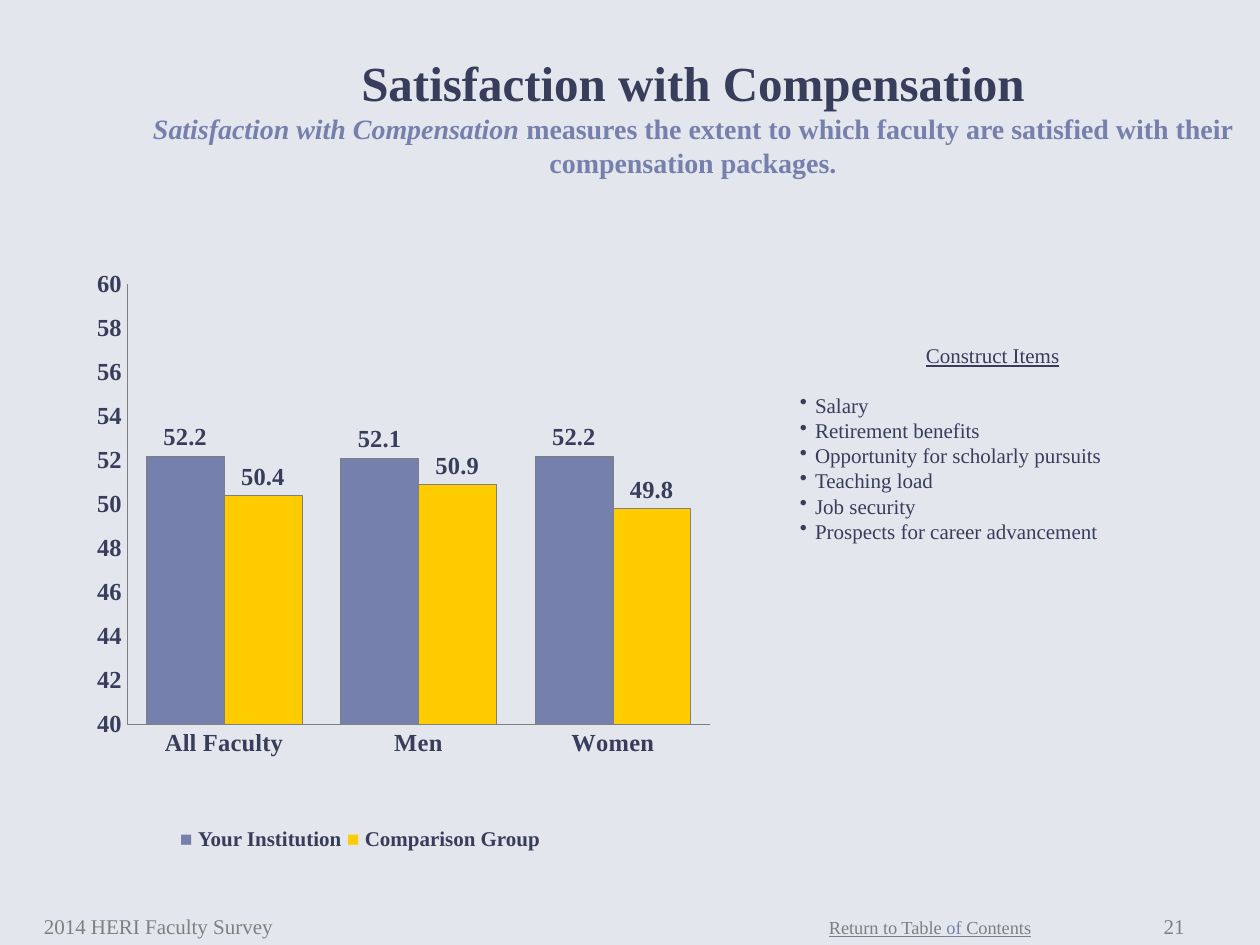
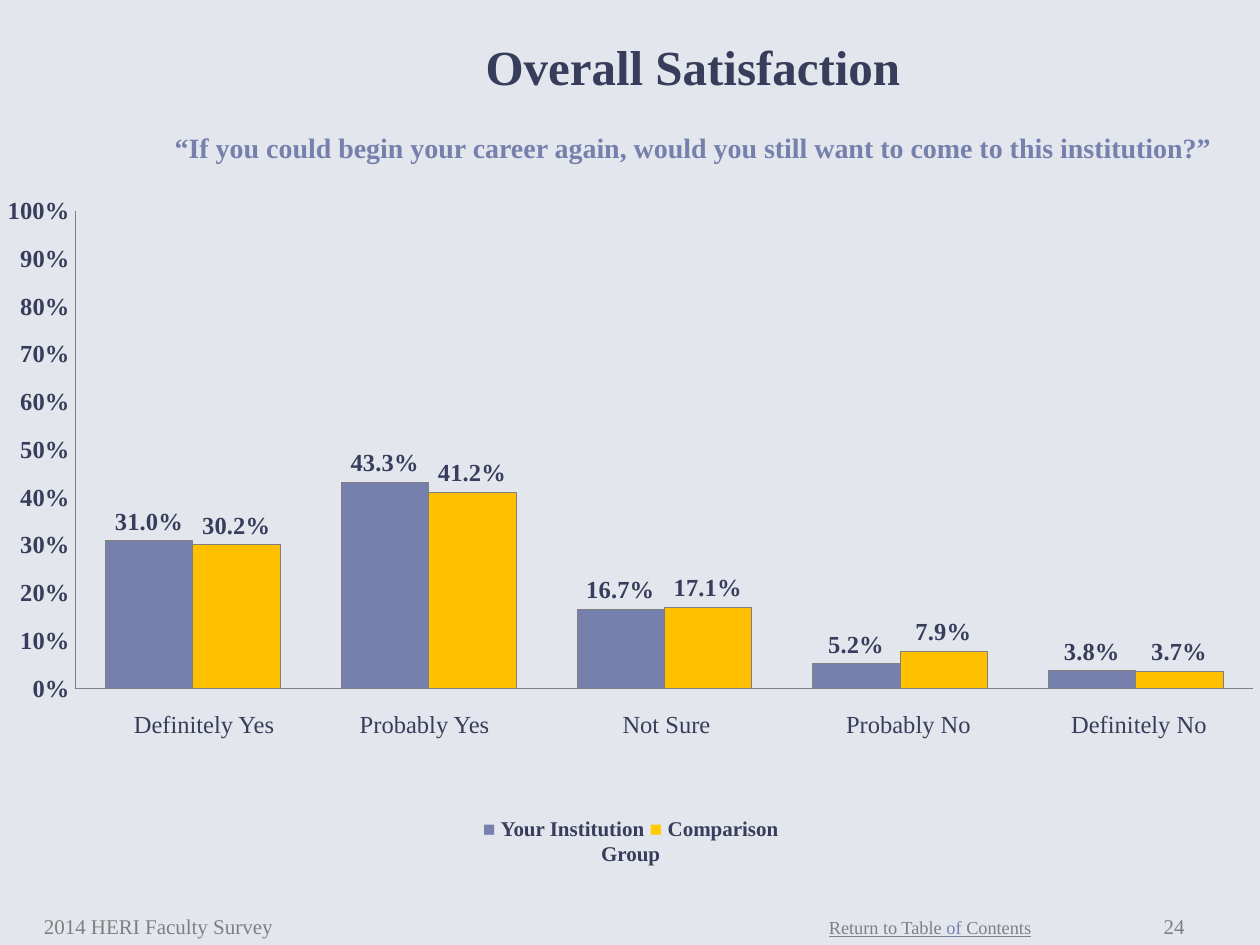
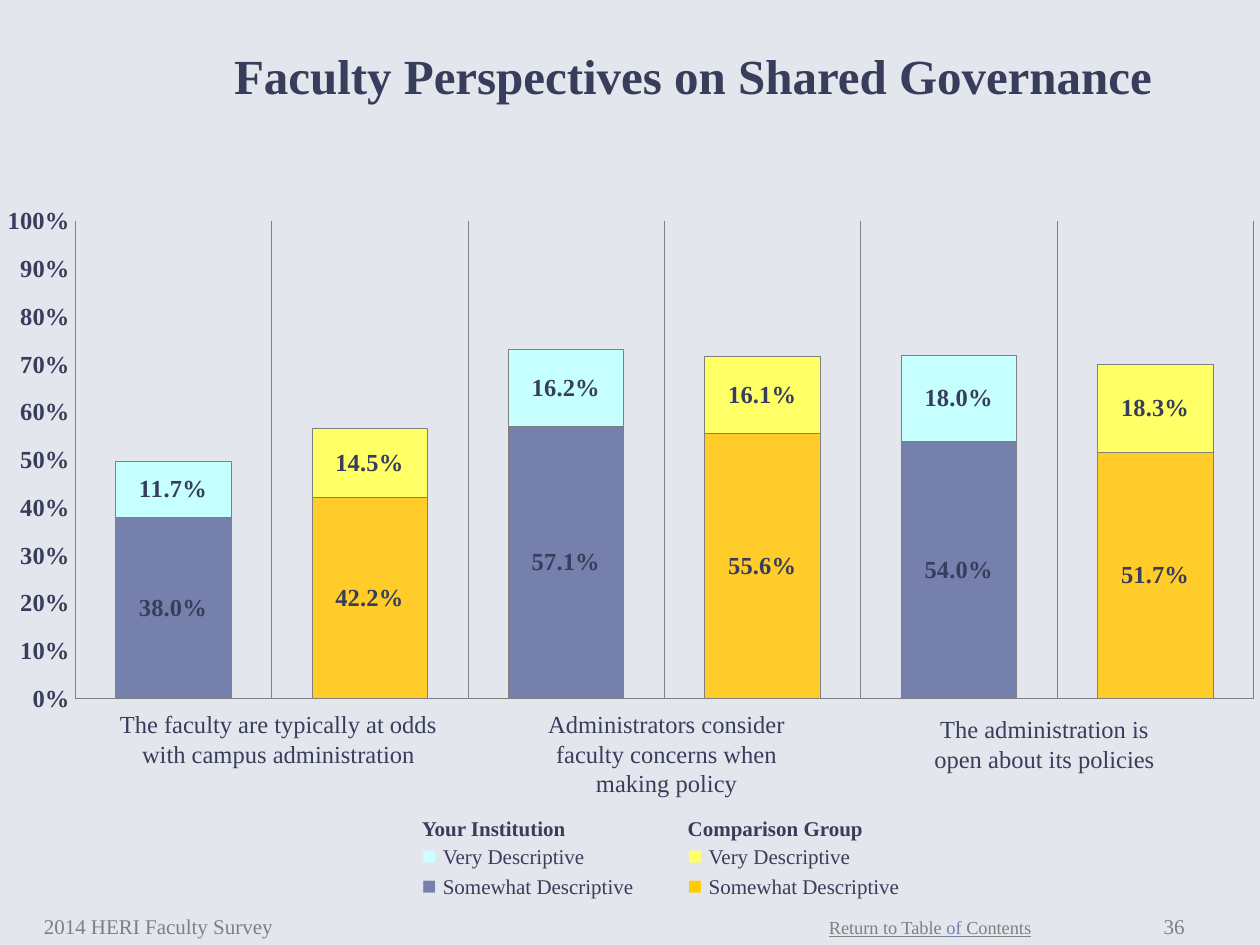
"""Build three faculty survey slides with column charts and shared titles and footers."""
from lxml import etree
from pptx import Presentation
from pptx.chart.data import CategoryChartData
from pptx.dml.color import RGBColor
from pptx.enum.chart import XL_CHART_TYPE, XL_LABEL_POSITION, XL_TICK_LABEL_POSITION, XL_TICK_MARK
from pptx.enum.text import MSO_ANCHOR, PP_ALIGN
from pptx.oxml.ns import qn
from pptx.util import Inches, Pt

LEFT, CENTER, RIGHT = PP_ALIGN.LEFT, PP_ALIGN.CENTER, PP_ALIGN.RIGHT
TOP, MIDDLE, BOTTOM = MSO_ANCHOR.TOP, MSO_ANCHOR.MIDDLE, MSO_ANCHOR.BOTTOM
CLUSTERED, STACKED = XL_CHART_TYPE.COLUMN_CLUSTERED, XL_CHART_TYPE.COLUMN_STACKED
OUTSIDE_END, LABEL_CENTER = XL_LABEL_POSITION.OUTSIDE_END, XL_LABEL_POSITION.CENTER
NO_TICK, NO_AXIS_LABELS = XL_TICK_MARK.NONE, XL_TICK_LABEL_POSITION.NONE

FONT = "Times New Roman"
COLORS = {
    "background": "E4E6EE",
    "navy": "373D5A",
    "blue": "7680AC",
    "gray": "7F7F7F",
    "gold": "FFCC00",
    "amber": "FFC000",
    "light_gold": "FFCC29",
    "aqua": "C5FFFE",
    "legend_aqua": "CCFFFF",
    "yellow": "FFFF66",
}
RGB = {name: RGBColor.from_string(value) for name, value in COLORS.items()}
WIDE_PLOT = (0.055, 0.029, 0.946, 0.933)


def add_text(slide, box, paragraphs, size, bold=False, align=LEFT, anchor=TOP):
    """Add a text box whose paragraphs are lists of (text, color) runs."""
    frame = slide.shapes.add_textbox(*map(Inches, box)).text_frame
    frame.word_wrap = True
    frame.vertical_anchor = anchor
    for index, runs in enumerate(paragraphs):
        paragraph = frame.paragraphs[0] if index == 0 else frame.add_paragraph()
        paragraph.alignment = align
        paragraph.font.name = FONT
        paragraph.font.size = Pt(size)
        paragraph.font.bold = bold
        for text, color in runs:
            run = paragraph.add_run()
            run.text = text
            run.font.color.rgb = RGB[color]
    return frame.paragraphs


def add_column_chart(slide, box, chart_type, categories, values, fills, scale, formats, gap, plot_box):
    """Add a two-series column chart; fills holds the repeating colors of each series."""
    data = CategoryChartData()
    data.categories = categories
    for number, series_values in enumerate(values, 1):
        data.add_series(f"Series {number}", series_values)
    chart = slide.shapes.add_chart(chart_type, *map(Inches, box), data).chart
    chart.has_title = False
    chart.has_legend = False
    chart.font.name = FONT
    chart.font.size = Pt(14)
    chart.font.bold = True
    chart.font.color.rgb = RGB["navy"]

    value_axis = chart.value_axis
    value_axis.minimum_scale, value_axis.maximum_scale, value_axis.major_unit = scale
    value_axis.has_major_gridlines = False
    value_axis.tick_labels.number_format, label_format = formats
    value_axis.tick_labels.number_format_is_linked = False
    for axis in (value_axis, chart.category_axis):
        axis.major_tick_mark = axis.minor_tick_mark = NO_TICK
        axis.format.line.color.rgb = RGB["gray"]
        axis.format.line.width = Pt(0.25)

    plot = chart.plots[0]
    plot.gap_width = gap
    plot.overlap = 100 if chart_type == STACKED else 0
    plot.vary_by_categories = False
    plot.has_data_labels = True
    labels = plot.data_labels
    labels.show_value = True
    labels.number_format = label_format
    labels.number_format_is_linked = False
    labels.position = LABEL_CENTER if chart_type == STACKED else OUTSIDE_END
    for series, colors in zip(plot.series, fills):
        series.invert_if_negative = False
        if len(colors) == 1:
            targets = [series]
        else:
            targets = [series.points[index] for index in range(len(categories))]
        for index, target in enumerate(targets):
            target.format.fill.solid()
            target.format.fill.fore_color.rgb = RGB[colors[index % len(colors)]]
            target.format.line.color.rgb = RGB["gray"]
            target.format.line.width = Pt(0.25)

    plot_area = chart._chartSpace.chart.plotArea
    for old_layout in plot_area.findall(qn("c:layout")):
        plot_area.remove(old_layout)
    layout = etree.Element(qn("c:layout"))
    manual = etree.SubElement(layout, qn("c:manualLayout"))
    settings = [("layoutTarget", "inner"), ("xMode", "edge"), ("yMode", "edge"), *zip("xywh", plot_box)]
    for tag, value in settings:
        etree.SubElement(manual, qn(f"c:{tag}")).set("val", str(value))
    plot_area.insert(0, layout)
    return chart


presentation = Presentation()
presentation.slide_width, presentation.slide_height = Inches(10), Inches(7.5)
master_fill = presentation.slide_master.background.fill
master_fill.solid()
master_fill.fore_color.rgb = RGB["background"]

slides = []
for page, title, subtitle, title_height, subtitle_gap in (
    ("21", "Satisfaction with Compensation",
     ["Satisfaction with Compensation ",
      "measures the extent to which faculty are satisfied with their compensation packages."], 1.5, 0),
    ("24", "Overall Satisfaction",
     ["“If you could begin your career again, would you still want to come to this institution?”"], 1.25, 20),
    ("36", "Faculty Perspectives on Shared Governance", [], 0.85, 0),
):
    slide = presentation.slides.add_slide(presentation.slide_layouts[6])
    slides.append(slide)
    heading = [[(title, "navy")]]
    if subtitle:
        heading.append([(text, "blue") for text in subtitle])
    title_lines = add_text(slide, (1, 0.17, 9, title_height), heading, 28, True, CENTER, MIDDLE)
    for paragraph in title_lines[1:]:
        paragraph.font.size = Pt(16)
        paragraph.space_before = Pt(subtitle_gap)
        if len(paragraph.runs) > 1:
            paragraph.runs[0].font.italic = True
    add_text(slide, (0.25, 7, 3.17, 0.5), [[("2014 HERI Faculty Survey", "gray")]], 12, anchor=BOTTOM)
    add_text(slide, (9, 7, 0.5, 0.5), [[(page, "gray")]], 12, align=RIGHT, anchor=BOTTOM)
    return_line = [("Return to Table ", "gray"), ("of", "blue"), (" Contents", "gray")]
    add_text(slide, (6.48, 7.22, 1.82, 0.28), [return_line], 10.5)[0].font.underline = True

compensation, satisfaction, governance = slides

group_legend = [("■ ", "blue"), ("Your Institution ", "navy"), ("■ ", "gold"), ("Comparison Group", "navy")]
add_text(compensation, (1.33, 6.5, 3.5, 0.3), [group_legend], 12, True)
add_text(satisfaction, (3.5, 6.42, 3.01, 0.3), [group_legend], 12, True, CENTER)

add_column_chart(
    compensation, (0, 1.75, 6.5, 4.5), CLUSTERED, ["All Faculty", "Men", "Women"],
    [(52.2, 52.1, 52.2), (50.4, 50.9, 49.8)], [["blue"], ["gold"]],
    (40, 60, 2), ("#,##0", "#,##0.0"), 50, (0.155, 0.112, 0.712, 0.777))

construct_items = [
    "Construct Items", "Salary", "Retirement benefits", "Opportunity for scholarly pursuits",
    "Teaching load", "Job security", "Prospects for career advancement",
]
item_lines = add_text(compensation, (6.25, 2.67, 3.42, 3.42), [[(item, "navy")] for item in construct_items], 12)
item_lines[0].font.underline = True
item_lines[0]._p.get_or_add_pPr().set("marL", str(Inches(1)))
for paragraph in item_lines[1:]:
    properties = paragraph._p.get_or_add_pPr()
    properties.set("marL", str(Inches(0.12)))
    properties.set("indent", str(Inches(-0.12)))
    bullet = etree.Element(qn("a:buChar"))
    bullet.set("char", "•")
    properties.insert(0, bullet)
item_lines[1].space_before = Pt(14)

satisfaction_chart = add_column_chart(
    satisfaction, (0.06, 1.56, 9.89, 4.06), CLUSTERED, ["1", "2", "3", "4", "5"],
    [(0.31, 0.433, 0.167, 0.052, 0.038), (0.302, 0.412, 0.171, 0.079, 0.037)], [["blue"], ["amber"]],
    (0, 1, 0.1), ("0%", "0.0%"), 70, WIDE_PLOT)

governance_chart = add_column_chart(
    governance, (0.06, 1.64, 9.89, 4.06), STACKED, ["1", "2", "3", "4", "5", "6"],
    [(0.38, 0.422, 0.571, 0.556, 0.54, 0.517), (0.117, 0.145, 0.162, 0.161, 0.18, 0.183)],
    [["blue", "light_gold"], ["aqua", "yellow"]], (0, 1, 0.1), ("0%", "0.0%"), 70, WIDE_PLOT)

for chart in (satisfaction_chart, governance_chart):
    chart.category_axis.tick_label_position = NO_AXIS_LABELS
governance_chart.category_axis.has_major_gridlines = True
gridline = governance_chart.category_axis.major_gridlines.format.line
gridline.color.rgb = RGB["gray"]
gridline.width = Pt(0.25)

for slide, left, top, width, answer in (
    (satisfaction, 0.83, 5.58, 1.58, "Definitely Yes"),
    (satisfaction, 2.58, 5.58, 1.58, "Probably Yes"),
    (satisfaction, 4.5, 5.58, 1.58, "Not Sure"),
    (satisfaction, 6.42, 5.58, 1.58, "Probably No"),
    (satisfaction, 8.25, 5.58, 1.58, "Definitely No"),
    (governance, 0.67, 5.58, 3.08, "The faculty are typically at odds with campus administration"),
    (governance, 4.25, 5.58, 2.08, "Administrators consider faculty concerns when making policy"),
    (governance, 7.25, 5.62, 2.08, "The administration is open about its policies"),
):
    add_text(slide, (left, top, width, 0.34), [[(answer, "navy")]], 14, align=CENTER)

for left, group, very_color, somewhat_color in (
    (3.25, "Your Institution", "legend_aqua", "blue"),
    (5.36, "Comparison Group", "yellow", "gold"),
):
    legend_lines = add_text(governance, (left, 6.42, 2.2, 0.8), [
        [(group, "navy")],
        [("■ ", very_color), ("Very Descriptive", "navy")],
        [("■ ", somewhat_color), ("Somewhat Descriptive", "navy")],
    ], 12)
    legend_lines[0].font.bold = True
    for paragraph in legend_lines[1:]:
        paragraph.runs[0].font.size = Pt(14)

presentation.save("out.pptx")
